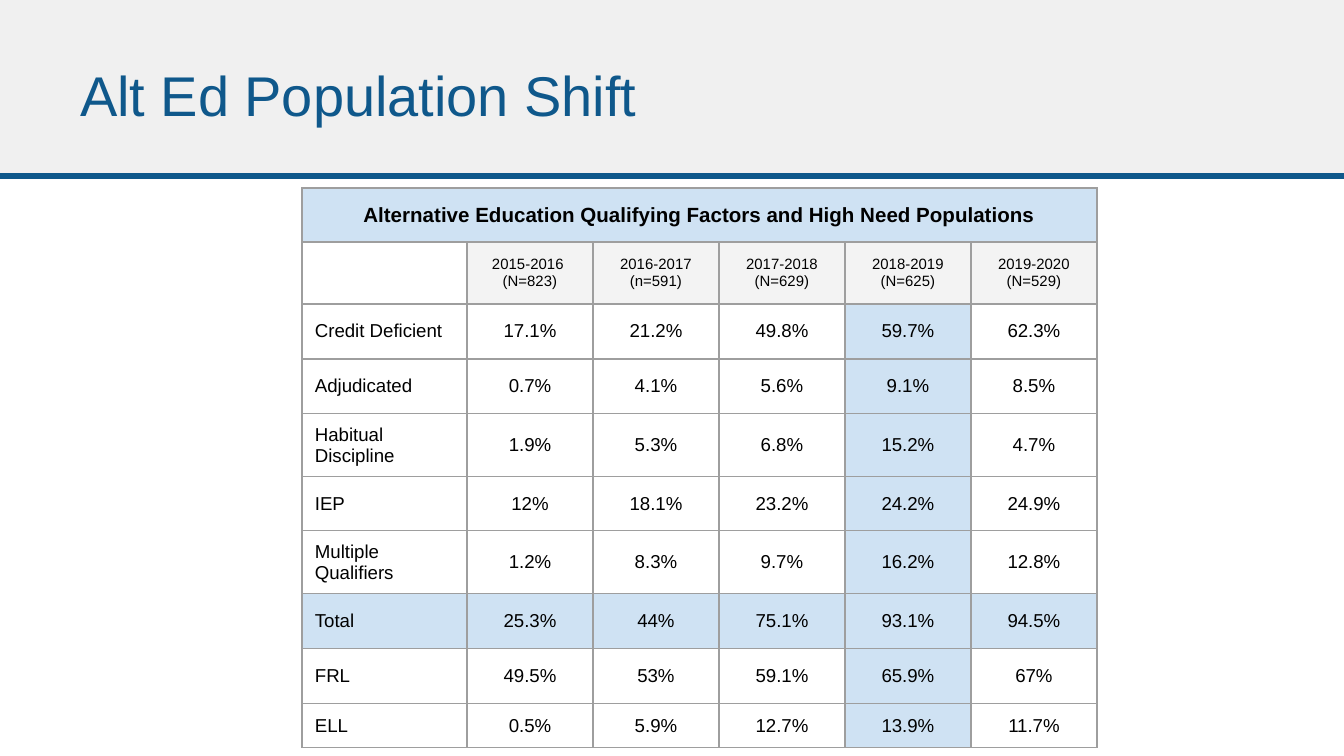
from lxml.etree import SubElement
from pptx import Presentation
from pptx.dml.color import RGBColor
from pptx.enum.shapes import MSO_CONNECTOR as Connector, MSO_SHAPE as Shape
from pptx.enum.text import MSO_ANCHOR as Anchor, PP_ALIGN as Align
from pptx.oxml.ns import qn
from pptx.util import Emu, Pt

EMU_PER_PX = 914400 / 134.4
TITLE = "Alt Ed Population Shift"
TABLE_TITLE = "Alternative Education Qualifying Factors and High Need Populations"
YEARS = ["", "2015-2016 \v(N=823)", "2016-2017 (n=591)", "2017-2018 (N=629)",
         "2018-2019\n(N=625)", "2019-2020\n(N=529)"]
FACTORS = [
    ["Credit Deficient", "17.1%", "21.2%", "49.8%", "59.7%", "62.3%"],
    ["Adjudicated", "0.7%", "4.1%", "5.6%", "9.1%", "8.5%"],
    ["Habitual Discipline", "1.9%", "5.3%", "6.8%", "15.2%", "4.7%"],
    ["IEP", "12%", "18.1%", "23.2%", "24.2%", "24.9%"],
    ["Multiple Qualifiers", "1.2%", "8.3%", "9.7%", "16.2%", "12.8%"],
    ["Total", "25.3%", "44%", "75.1%", "93.1%", "94.5%"],
    ["FRL", "49.5%", "53%", "59.1%", "65.9%", "67%"],
    ["ELL", "0.5%", "5.9%", "12.7%", "13.9%", "11.7%"],
]
COLUMN_WIDTHS = [165] + [126] * 5
ROW_HEIGHTS = [54, 62, 55, 55, 63, 54, 63, 55, 55, 44]
HIGHLIGHT_COLUMN = 4


def px(length):
    return Emu(round(length * EMU_PER_PX))


def color(value):
    return RGBColor.from_string(value)


class SlideBuilder:
    font = "Arial"
    blue = "0F588B"
    band = "F0F0F0"
    ink = "000000"
    highlight = "CFE2F3"
    header = "F3F3F3"
    border = "9E9E9E"

    def __init__(self, slide):
        self.slide = slide

    def rectangle(self, left, top, width, height, fill):
        box = self.slide.shapes.add_shape(
            Shape.RECTANGLE, px(left), px(top), px(width), px(height))
        box.shadow.inherit = False
        box.fill.solid()
        box.fill.fore_color.rgb = color(fill)
        box.line.fill.background()

    def rule(self, left, top, right, bottom, weight):
        line = self.slide.shapes.add_connector(
            Connector.STRAIGHT, px(left), px(top), px(right), px(bottom))
        line.line.color.rgb = color(self.blue)
        line.line.width = Pt(weight)
        SubElement(line._element.spPr, qn("a:effectLst"))

    def set_text(self, frame, text, size, ink, align=Align.LEFT, bold=False):
        frame.text = text
        frame.word_wrap = True
        for para in frame.paragraphs:
            para.alignment = align
            for span in para.runs:
                span.font.name = self.font
                span.font.size = Pt(size)
                span.font.bold = bold
                span.font.color.rgb = color(ink)

    def title(self, left, top, width, height, text):
        box = self.slide.shapes.add_textbox(px(left), px(top), px(width), px(height))
        frame = box.text_frame
        frame.vertical_anchor = Anchor.MIDDLE
        frame.margin_left = frame.margin_right = px(13)
        frame.margin_top = frame.margin_bottom = px(13)
        self.set_text(frame, text, 30, self.blue)

    def table(self, left, top, widths, heights):
        frame = self.slide.shapes.add_table(
            len(heights), len(widths), px(left), px(top), px(sum(widths)), px(sum(heights)))
        table = frame.table
        table.first_row = table.horz_banding = False
        for column, width in zip(table.columns, widths):
            column.width = px(width)
        for row, height in zip(table.rows, heights):
            row.height = px(height)
        for cell in table.iter_cells():
            self.cell_style(cell)
        return table

    def cell_style(self, cell):
        cell.vertical_anchor = Anchor.MIDDLE
        cell.margin_left = cell.margin_right = px(13)
        cell.margin_top = cell.margin_bottom = px(9)
        properties = cell._tc.get_or_add_tcPr()
        for side in ("lnL", "lnR", "lnT", "lnB"):
            line = SubElement(properties, qn(f"a:{side}"), w=str(Pt(0.75)))
            fill = SubElement(line, qn("a:solidFill"))
            SubElement(fill, qn("a:srgbClr"), val=self.border)
        cell.fill.background()

    def cell(self, cell, text, size, fill=None, align=Align.CENTER, bold=False):
        self.set_text(cell.text_frame, text, size, self.ink, align, bold)
        if fill:
            cell.fill.solid()
            cell.fill.fore_color.rgb = color(fill)


def main():
    deck = Presentation()
    deck.slide_width, deck.slide_height = px(1344), px(756)
    page = SlideBuilder(deck.slides.add_slide(deck.slide_layouts[6]))

    page.rectangle(0, 0, 1344, 176, page.band)
    page.rule(0, 176, 1344, 176, 3)
    page.title(67, 31, 1031, 126, TITLE)

    table = page.table(302, 188, COLUMN_WIDTHS, ROW_HEIGHTS)
    table.cell(0, 0).merge(table.cell(0, len(COLUMN_WIDTHS) - 1))
    page.cell(table.cell(0, 0), TABLE_TITLE, 11, page.highlight, bold=True)
    for column, year in enumerate(YEARS):
        page.cell(table.cell(1, column), year, 8, page.header if year else None)
    for row, values in enumerate(FACTORS, start=2):
        for column, value in enumerate(values):
            marked = values[0] == "Total" or column == HIGHLIGHT_COLUMN
            page.cell(table.cell(row, column), value, 10,
                      page.highlight if marked else None,
                      Align.CENTER if column else Align.LEFT)

    deck.save("out.pptx")


if __name__ == "__main__":
    main()
